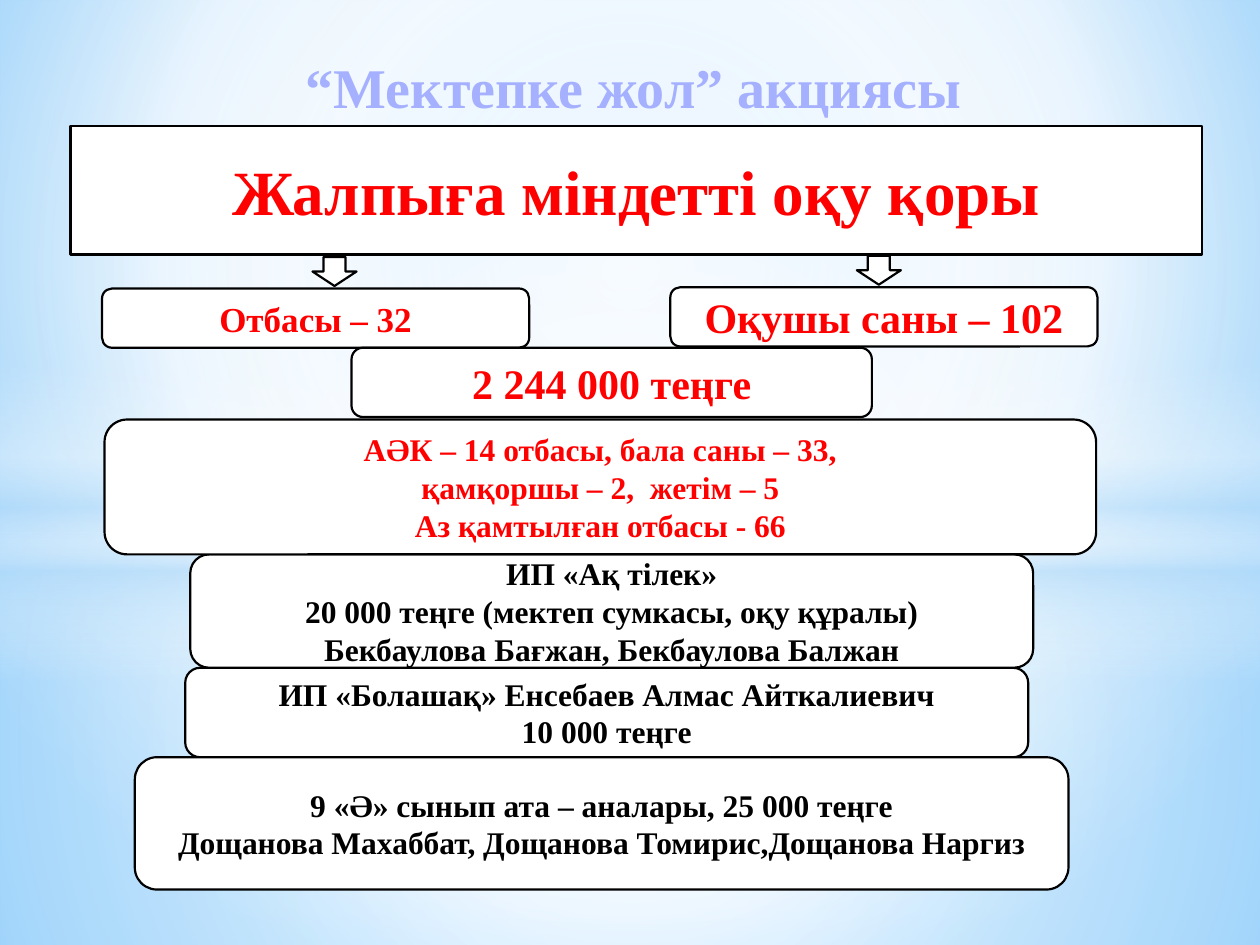
import pptx
import pptx.util
import pptx.oxml
from pptx.dml.color import RGBColor
from pptx.enum.shapes import MSO_SHAPE
from pptx.enum.text import MSO_ANCHOR, MSO_AUTO_SIZE, PP_ALIGN
from pptx.oxml.ns import nsdecls
from pptx.util import Inches

THEME = {
    "font": "Times New Roman",
    "title": "A5B0FF", "accent": "FF0000", "text": "000000",
    "box": "FFFFFF", "line": "000000", "line_width": 1.25,
    "title_size": 32, "banner": 36, "large": 24, "medium": 20, "body": 18,
}

TITLE = "“Мектепке жол” акциясы"
TITLE_AT = (2.3, 0.36, 5.46, 0.64)

# Gradient stops: position %, colour, opacity %; then centre rectangle or angle
SKY = ([(0, "9ED5FF", 100), (60, "FFFFFF", 100), (100, "5BB9FF", 100)],
       (20, 10, 20, 60))
CENTRE = (50, 50, 50, 50)
BACKDROP = [
    (MSO_SHAPE.RECTANGLE, (0, 4.23, 10, 3.27),
     [(0, "FFFFFF", 91), (37, "FFFFFF", 76), (100, "B4DCFA", 79)], CENTRE),
    (MSO_SHAPE.RECTANGLE, (0, 0, 10, 4.23),
     [(0, "FFFFFF", 89), (48, "FFFFFF", 62), (100, "B4DCFA", 79)], CENTRE),
    (MSO_SHAPE.RECTANGLE, (0, 2.9, 10, 2.5),
     [(0, "FFFFFF", 0), (29, "FFFFFF", 30), (45, "B4DCFA", 40),
      (55, "FFFFFF", 26), (65, "B4DCFA", 60), (100, "FFFFFF", 0)], 90),
    (MSO_SHAPE.OVAL, (0, 1.75, 10, 5.58),
     [(0, "FFFFFF", 100), (54, "FFFFFF", 0)], CENTRE),
]

# Shape, place, type size, colour, lines of text
BOXES = [
    (MSO_SHAPE.RECTANGLE, (0.56, 1, 8.98, 1.02), "banner", "accent",
     ["Жалпыға міндетті оқу қоры"]),
    (MSO_SHAPE.ROUNDED_RECTANGLE, (0.81, 2.29, 3.39, 0.47), "medium", "accent",
     ["Отбасы – 32"]),
    (MSO_SHAPE.ROUNDED_RECTANGLE, (5.32, 2.28, 3.39, 0.47), "large", "accent",
     ["Оқушы саны – 102"]),
    (MSO_SHAPE.DOWN_ARROW, (2.48, 2.04, 0.35, 0.23), "body", "text", []),
    (MSO_SHAPE.DOWN_ARROW, (6.8, 2.03, 0.35, 0.23), "body", "text", []),
    (MSO_SHAPE.ROUNDED_RECTANGLE, (2.79, 2.76, 4.13, 0.55), "large", "accent",
     ["2 244 000 теңге"]),
    (MSO_SHAPE.ROUNDED_RECTANGLE, (1.47, 5.3, 6.69, 0.71), "body", "text",
     ["ИП «Болашақ» Енсебаев Алмас Айткалиевич", "10 000 теңге"]),
    (MSO_SHAPE.ROUNDED_RECTANGLE, (1.51, 4.4, 6.69, 0.9), "body", "text",
     ["ИП «Ақ тілек»", "20 000 теңге (мектеп сумкасы, оқу құралы)",
      "Бекбаулова Бағжан, Бекбаулова Балжан"]),
    (MSO_SHAPE.ROUNDED_RECTANGLE, (1.07, 6.01, 7.41, 1.05), "body", "text",
     ["9 «Ә» сынып ата – аналары, 25 000 теңге",
      "Дощанова Махаббат, Дощанова Томирис,Дощанова Наргиз"]),
    (MSO_SHAPE.ROUNDED_RECTANGLE, (0.83, 3.33, 7.87, 1.07), "body", "accent",
     ["АӘК – 14 отбасы, бала саны – 33,", "қамқоршы – 2,  жетім – 5",
      "Аз қамтылған отбасы - 66"]),
]


def set_gradient(fill, element, stops, direction):
    """Fill with a linear gradient (angle) or a circular one (rectangle)."""
    fill.gradient()
    gs = "".join(
        f'<a:gs pos="{pos * 1000}"><a:srgbClr val="{color}">'
        f'<a:alpha val="{alpha * 1000}"/></a:srgbClr></a:gs>'
        for pos, color, alpha in stops)
    if isinstance(direction, tuple):
        sides = " ".join(f'{k}="{v * 1000}"' for k, v in zip("ltrb", direction))
        shade = f'<a:path path="circle"><a:fillToRect {sides}/></a:path>'
    else:
        shade = f'<a:lin ang="{direction * 60000}" scaled="0"/>'
    old = element.xpath(".//a:gradFill")[0]
    old.getparent().replace(old, pptx.oxml.parse_xml(
        f'<a:gradFill {nsdecls("a")} rotWithShape="1">'
        f'<a:gsLst>{gs}</a:gsLst>{shade}</a:gradFill>'))


def add_shape(s, kind, at):
    sp = s.shapes.add_shape(kind, *map(Inches, at))
    sp.shadow.inherit = False
    return sp


def set_text(tf, lines, size, color):
    tf.text = "\n".join(lines)
    tf.vertical_anchor = MSO_ANCHOR.MIDDLE
    for p in tf.paragraphs:
        p.alignment = PP_ALIGN.CENTER
        for r in p.runs:
            r.font.name = THEME["font"]
            r.font.size = pptx.util.Pt(THEME[size])
            r.font.bold = True
            r.font.color.rgb = RGBColor.from_string(THEME[color])


def main():
    prs = pptx.Presentation()
    prs.slide_width, prs.slide_height = Inches(10), Inches(7.5)
    s = prs.slides.add_slide(prs.slide_layouts[5])

    # Background and soft light layers
    set_gradient(s.background.fill, s.element, *SKY)
    for kind, at, stops, direction in BACKDROP:
        sp = add_shape(s, kind, at)
        sp.line.fill.background()
        set_gradient(sp.fill, sp.element, stops, direction)

    # Title, brought in front of the light layers
    title = s.shapes.title
    title.left, title.top, title.width, title.height = map(Inches, TITLE_AT)
    set_text(title.text_frame, [TITLE], "title_size", "title")
    title.text_frame.word_wrap = False
    title.text_frame.auto_size = MSO_AUTO_SIZE.NONE
    s.shapes.element.append(title.element)

    # Boxes and arrows
    for kind, at, size, color, lines in BOXES:
        sp = add_shape(s, kind, at)
        sp.fill.solid()
        sp.fill.fore_color.rgb = RGBColor.from_string(THEME["box"])
        sp.line.color.rgb = RGBColor.from_string(THEME["line"])
        sp.line.width = pptx.util.Pt(THEME["line_width"])
        if lines:
            set_text(sp.text_frame, lines, size, color)

    prs.save("out.pptx")


if __name__ == "__main__":
    main()
